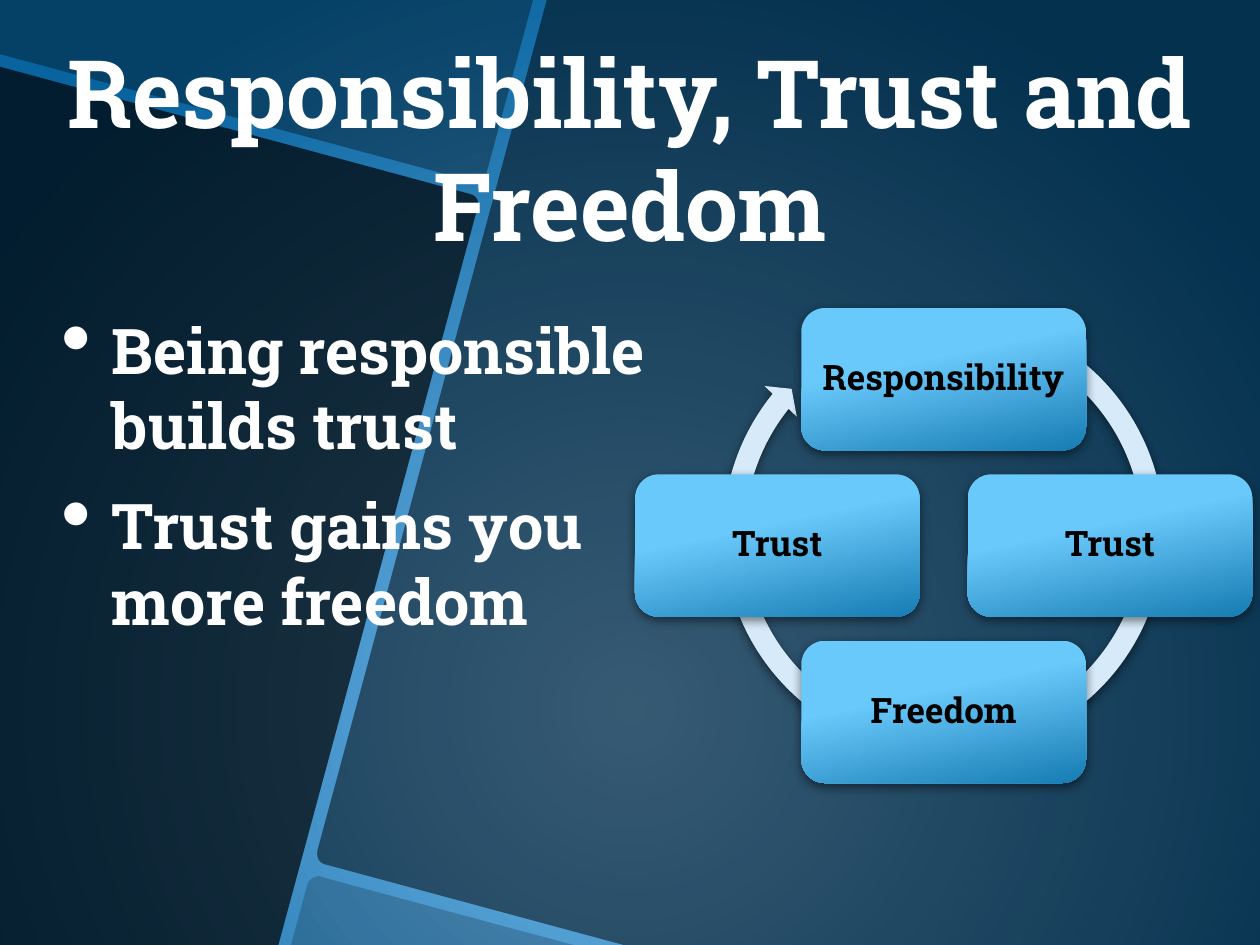
from lxml.etree import SubElement
from pptx import Presentation
from pptx.dml.color import RGBColor
from pptx.enum.shapes import MSO_SHAPE as Shape
from pptx.enum.text import MSO_ANCHOR as Anchor, PP_ALIGN as Align
from pptx.oxml.ns import qn
from pptx.util import Inches, Pt


def color(value):
    return RGBColor.from_string(value)


def add_child(parent, tag, **attributes):
    return SubElement(parent, qn(tag), {name: str(value) for name, value in attributes.items()})


def curve_points(start, controls, steps=6):
    points = (start, controls[0:2], controls[2:4], controls[4:6])
    for step in range(1, steps + 1):
        t = step / steps
        weights = ((1 - t) ** 3, 3 * t * (1 - t) ** 2, 3 * t * t * (1 - t), t ** 3)
        yield tuple(sum(w * p[axis] for w, p in zip(weights, points)) for axis in (0, 1))


def set_gradient(fill, stops):
    fill.gradient()
    for stop, (position, value) in zip(fill.gradient_stops, stops):
        stop.position = position
        stop.color.rgb = color(value)


def write_text(frame, *texts, size, ink="FFFFFF", align=Align.LEFT, anchor=Anchor.TOP,
               bullet=None, before=0, after=0, spacing=None):
    frame.word_wrap = True
    frame.vertical_anchor = anchor
    for index, text in enumerate(texts):
        paragraph = frame.paragraphs[0] if index == 0 else frame.add_paragraph()
        if bullet:
            properties = paragraph._p.get_or_add_pPr()
            properties.set("marL", str(Inches(0.4)))
            properties.set("indent", str(Inches(-0.4)))
            add_child(properties, "a:buSzPct", val=140000)
            add_child(properties, "a:buChar", char=bullet)
        paragraph.alignment = align
        paragraph.space_before = Pt(before if index else 0)
        paragraph.space_after = Pt(after)
        if spacing:
            paragraph.line_spacing = spacing
        run = paragraph.add_run()
        run.text = text
        run.font.name = "Roboto Slab"
        run.font.size = Pt(size)
        run.font.bold = True
        run.font.color.rgb = color(ink)


class SlideBuilder:
    """Draws styled elements on the current slide."""

    def __init__(self, slide):
        self.slide = slide
        self.shapes = slide.shapes

    def background(self, center, edge):
        set_gradient(self.slide.background.fill, ((0, center), (1, edge)))
        gradient = self.slide.element.find(".//" + qn("a:gradFill"))
        gradient.remove(gradient.find(qn("a:lin")))
        radial = add_child(gradient, "a:path", path="circle")
        add_child(radial, "a:fillToRect", l=50000, t=50000, r=50000, b=0)

    def panel(self, opacity, start, *segments):
        points = [start]
        for segment in segments:
            points.extend([segment] if len(segment) == 2 else curve_points(points[-1], segment))
        corners = [(Inches(x), Inches(y)) for x, y in points]
        builder = self.shapes.build_freeform(*corners[0], scale=1.0)
        builder.add_line_segments(corners[1:], close=True)
        shape = builder.convert_to_shape()
        shape.shadow.inherit = False
        shape.line.fill.background()
        shape.fill.solid()
        shape.fill.fore_color.rgb = color("000000")
        ink = shape._element.spPr.find(".//" + qn("a:srgbClr"))
        add_child(ink, "a:alpha", val=opacity * 1000)

    def shadowed(self, preset, *box):
        shape = self.shapes.add_shape(preset, *map(Inches, box))
        shape.line.fill.background()
        shape.shadow.inherit = False
        effects = shape._element.spPr.find(qn("a:effectLst"))
        shadow = add_child(effects, "a:outerShdw", blurRad=Pt(6), dist=Pt(2),
                           dir=90 * 60000, algn="ctr", rotWithShape=0)
        ink = add_child(shadow, "a:srgbClr", val="000000")
        add_child(ink, "a:alpha", val=50000)
        return shape

    def cycle_arrow(self, left, top, size):
        shape = self.shadowed(Shape.CIRCULAR_ARROW, left, top, size, size)
        for index, value in enumerate((0.047, 2.729, 131.349, 178.275, 0.048)):
            shape.adjustments[index] = value
        shape.fill.solid()
        shape.fill.fore_color.rgb = color("D6EAF9")

    def node(self, text, center_x, center_y, width=2.26, height=1.13):
        shape = self.shadowed(Shape.ROUNDED_RECTANGLE, center_x - width / 2,
                              center_y - height / 2, width, height)
        set_gradient(shape.fill, ((0.38, "6AC9FB"), (1, "167CB2")))
        shape.fill.gradient_angle = 360 - 78
        write_text(shape.text_frame, text, size=20, ink="000000", align=Align.CENTER,
                   anchor=Anchor.MIDDLE, spacing=0.9)

    def text(self, box, *texts, **style):
        shape = self.shapes.add_textbox(*map(Inches, box))
        write_text(shape.text_frame, *texts, **style)


def main():
    presentation = Presentation()
    presentation.slide_width, presentation.slide_height = Inches(10), Inches(7.5)
    builder = SlideBuilder(presentation.slides.add_slide(presentation.slide_layouts[6]))

    builder.background("70B6E8", "08639E")
    builder.panel(70, (0, 0.53), (3.73, 1.54), (3.78, 1.55, 3.81, 1.6, 3.79, 1.65),
                  (2.21, 7.5), (0, 7.5))
    builder.panel(35, (0, 0), (4.23, 0), (3.86, 1.38),
                  (3.85, 1.43, 3.8, 1.45, 3.75, 1.44), (0, 0.43))
    builder.panel(20, (2.51, 6.96), (2.52, 6.95, 2.54, 6.95, 2.55, 6.96), (4.55, 7.5),
                  (2.31, 7.5), (2.44, 7.02), (2.45, 6.99, 2.48, 6.96, 2.51, 6.96))
    builder.panel(50, (4.34, 0), (10, 0), (10, 7.5), (4.95, 7.5), (2.58, 6.86),
                  (2.53, 6.85, 2.51, 6.8, 2.52, 6.75))

    builder.cycle_arrow(5.65, 2.39, 3.68)
    center_x, center_y, radius = 7.49, 4.33, 1.32
    for text, across, down in (("Responsibility", 0, -1), ("Trust", 1, 0),
                               ("Freedom", 0, 1), ("Trust", -1, 0)):
        builder.node(text, center_x + across * radius, center_y + down * radius)

    builder.text((0, 1.28, 10, 0.84), "Responsibility, Trust and Freedom",
                 size=54, align=Align.CENTER, anchor=Anchor.BOTTOM)
    builder.text((0.39, 2.42, 4.9, 3.73), "Being responsible builds trust",
                 "Trust gains you more freedom", size=36, bullet="•", before=8, after=6)
    presentation.save("out.pptx")


if __name__ == "__main__":
    main()
